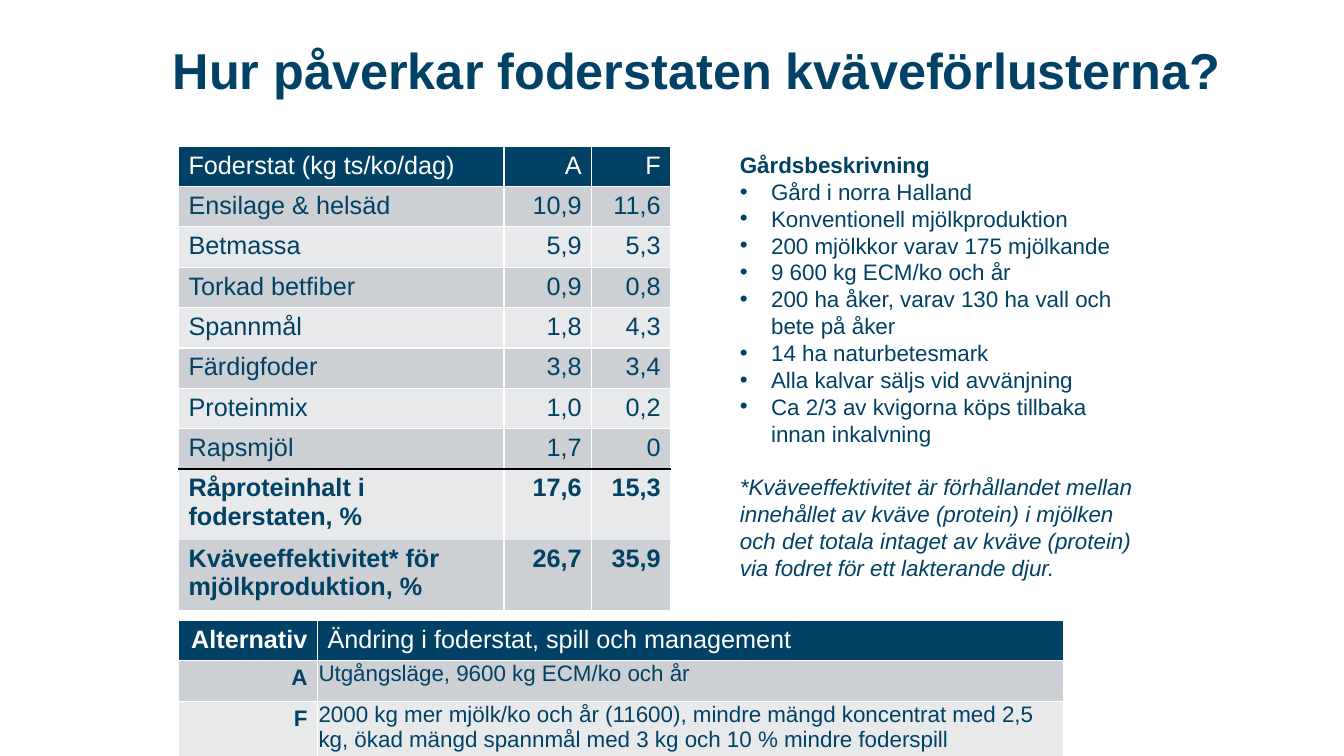
from lxml.etree import SubElement as Sub
from pptx import Presentation
from pptx.dml.color import RGBColor
from pptx.enum.text import MSO_ANCHOR as Anchor, PP_ALIGN as Align
from pptx.oxml.ns import qn
from pptx.util import Emu, Inches, Pt

COLS, ROWS = 32, 18
NAVY, WHITE, BLACK = "004165", "FFFFFF", "000000"
BANDS = "CCCFD3", "E7E9EA"
THIN, RULE, NONE = (WHITE, 1), (BLACK, 1), (WHITE, 0)


def color(code):
    return RGBColor.from_string(code)


def edge(cell, side, line):
    """Draw one cell border; side is T or B and a zero width hides it."""
    code, width = line
    ln = Sub(cell._tc.get_or_add_tcPr(), qn(f"a:ln{side}"), w=str(Pt(width)))
    if width:
        Sub(Sub(ln, qn("a:solidFill")), qn("a:srgbClr"), val=code)
    else:
        Sub(ln, qn("a:noFill"))


def bullet(para, indent):
    ppr = para._p.get_or_add_pPr()
    ppr.set("marL", str(indent))
    ppr.set("indent", str(-indent))
    Sub(ppr, qn("a:buFont"), typeface="Arial")
    Sub(ppr, qn("a:buChar"), char="•")


class Deck:
    def __init__(self, face="Arial"):
        self.face = face
        self.prs = Presentation()
        self.prs.slide_width, self.prs.slide_height = Inches(13.33), Inches(7.5)
        self.slide = self.prs.slides.add_slide(self.prs.slide_layouts[6])

    def x(self, cols):
        return Emu(int(self.prs.slide_width * cols / COLS))

    def y(self, rows):
        return Emu(int(self.prs.slide_height * rows / ROWS))

    def style(self, para, size, ink=NAVY, bold=False, italic=False, align=Align.LEFT):
        para.alignment = align
        font = para.font
        font.name, font.size, font.bold, font.italic = self.face, Pt(size), bold, italic
        font.color.rgb = color(ink)

    def box(self, left, top, width, height, anchor=Anchor.TOP):
        shape = self.slide.shapes.add_textbox(
            self.x(left), self.y(top), self.x(width), self.y(height))
        frame = shape.text_frame
        frame.word_wrap, frame.vertical_anchor = True, anchor
        return frame

    def title(self, text, *place):
        para = self.box(*place, anchor=Anchor.MIDDLE).paragraphs[0]
        para.text, para.line_spacing = text, 0.9
        self.style(para, 36, bold=True, align=Align.RIGHT)

    def facts(self, head, items, note, *place):
        """A heading, a bullet list and a closing note in italics."""
        frame = self.box(*place)
        lines = [head, *items, note]
        for i, text in enumerate(lines):
            para = frame.paragraphs[0] if i == 0 else frame.add_paragraph()
            last = i == len(lines) - 1
            para.text = text
            if last:
                para.space_before = Pt(19)
            elif i:
                bullet(para, Inches(0.31))
            self.style(para, 16, bold=i == 0, italic=last)

    def table(self, data, left, top, widths, heights, look, lines):
        """look(r, c) gives text style; lines maps a row boundary to its border."""
        grid = self.slide.shapes.add_table(
            len(data), len(widths), self.x(left), self.y(top),
            self.x(sum(widths)), self.y(sum(heights))).table
        for col, width in zip(grid.columns, widths):
            col.width = self.x(width)
        for r, (row, height) in enumerate(zip(data, heights)):
            grid.rows[r].height = self.y(height)
            for c, text in enumerate(row):
                cell = grid.cell(r, c)
                for side, bound in ("T", r), ("B", r + 1):
                    if bound in lines:
                        edge(cell, side, lines[bound])
                cell.fill.solid()
                cell.fill.fore_color.rgb = color(BANDS[(r - 1) % 2] if r else NAVY)
                cell.text = text
                self.style(cell.text_frame.paragraphs[0],
                           ink=NAVY if r else WHITE, **look(r, c))
        return grid


def main():
    deck = Deck()
    deck.title("Hur påverkar foderstaten kväveförlusterna?", 3.74, 0.26, 25.56, 2.98)

    feed = [
        ("Foderstat (kg ts/ko/dag)", "A", "F"),
        ("Ensilage & helsäd", "10,9", "11,6"),
        ("Betmassa", "5,9", "5,3"),
        ("Torkad betfiber", "0,9", "0,8"),
        ("Spannmål", "1,8", "4,3"),
        ("Färdigfoder", "3,8", "3,4"),
        ("Proteinmix", "1,0", "0,2"),
        ("Rapsmjöl", "1,7", "0"),
        ("Råproteinhalt i foderstaten, %", "17,6", "15,3"),
        ("Kväveeffektivitet* för mjölkproduktion, %", "26,7", "35,9"),
    ]
    deck.table(
        feed, 4.25, 3.48, (7.75, 2.09, 1.88), [0.9] + [0.92] * 7 + [1.55] * 2,
        lambda r, c: dict(size=18, bold=r > 7, align=Align.RIGHT if c else Align.LEFT),
        {1: THIN, 8: RULE, 9: NONE})

    deck.facts(
        "Gårdsbeskrivning",
        ["Gård i norra Halland",
         "Konventionell mjölkproduktion",
         "200 mjölkkor varav 175 mjölkande",
         "9 600 kg ECM/ko och år",
         "200 ha åker, varav 130 ha vall och bete på åker",
         "14 ha naturbetesmark",
         "Alla kalvar säljs vid avvänjning",
         "Ca 2/3 av kvigorna köps tillbaka innan inkalvning"],
        "*Kväveeffektivitet är förhållandet mellan innehållet av kväve (protein) "
        "i mjölken och det totala intaget av kväve (protein) via fodret för ett "
        "lakterande djur.",
        17.38, 3.48, 10, 10.58)

    plans = [
        ("Alternativ", "Ändring i foderstat, spill och management"),
        ("A", "Utgångsläge, 9600 kg ECM/ko och år"),
        ("F", "2000 kg mer mjölk/ko och år (11600), mindre mängd koncentrat med 2,5 kg, "
              "ökad mängd spannmål med 3 kg och 10 % mindre foderspill"),
    ]
    grid = deck.table(
        plans, 4.25, 14.76, (3.31, 17.76), (0.94, 0.98, 1.25),
        lambda r, c: dict(size=16 if r else 18, bold=c == 0,
                          align=Align.LEFT if c else Align.RIGHT),
        {1: THIN})
    for c in range(2):
        grid.cell(0, c).vertical_anchor = Anchor.MIDDLE
    for r in (1, 2):
        cell = grid.cell(r, 1)
        cell.margin_left = cell.margin_top = cell.margin_right = Inches(0.01)
        cell.margin_bottom = 0

    deck.prs.save("out.pptx")


if __name__ == "__main__":
    main()
